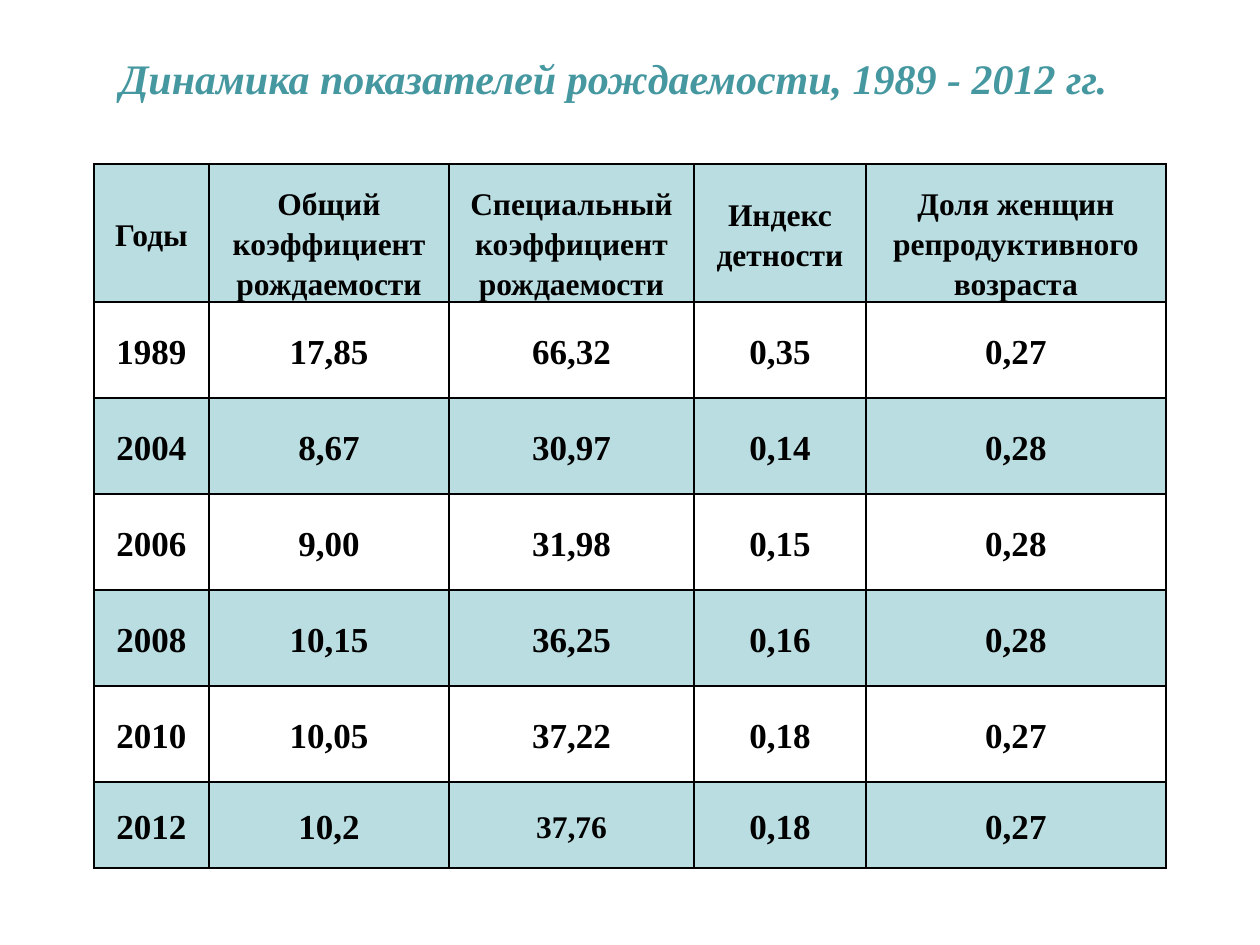
from lxml import etree
from pptx import Presentation, util as u
from pptx.dml.color import RGBColor
from pptx.enum import text
from pptx.oxml.ns import qn

TITLE = "Динамика показателей рождаемости, 1989 - 2012 гг."
HEAD = ["Годы", "Общий коэффициент рождаемости",
        "Специальный коэффициент рождаемости", "Индекс детности",
        "Доля женщин репродуктивного возраста"]
DATA = [
    ["1989", "17,85", "66,32", "0,35", "0,27"],
    ["2004", "8,67", "30,97", "0,14", "0,28"],
    ["2006", "9,00", "31,98", "0,15", "0,28"],
    ["2008", "10,15", "36,25", "0,16", "0,28"],
    ["2010", "10,05", "37,22", "0,18", "0,27"],
    ["2012", "10,2", "37,76", "0,18", "0,27"],
]
COLS = [115, 240, 245, 172, 300]
ROWS = [138] + [96] * 5 + [86]
LOW = {1, 2, 4}        # header columns set at the bottom
SMALL = (6, 2)         # the one value in header size

FONT = "Times New Roman"
TEAL = RGBColor(0x45, 0x97, 0xA0)
DARK = RGBColor(0x22, 0x4B, 0x50)
PALE = RGBColor(0xBA, 0xDD, 0xE1)
WHITE = RGBColor(0xFF, 0xFF, 0xFF)
BLACK = RGBColor(0, 0, 0)


def px(n):
    return u.Emu(round(n * 914400 / 126))


def stroke(line, color):
    fill = etree.SubElement(line, qn("a:solidFill"))
    etree.SubElement(fill, qn("a:srgbClr"), val=str(color))


def write(frame, words, size, color, slant=False):
    para = frame.paragraphs[0]
    para.alignment = text.PP_ALIGN.CENTER
    run = para.add_run()
    run.text = words
    font = run.font
    font.name, font.size, font.bold = FONT, u.Pt(size), True
    font.color.rgb = color
    if slant:
        font.italic = True
    return para, run


def border(cell):
    props = cell._tc.get_or_add_tcPr()
    for i, side in enumerate(("lnL", "lnR", "lnT", "lnB")):
        line = etree.Element(qn("a:" + side), w=str(u.Pt(1)))
        stroke(line, BLACK)
        props.insert(i, line)


deck = Presentation()
deck.slide_width, deck.slide_height = px(1260), px(945)
slide = deck.slides.add_slide(deck.slide_layouts[6])

# Title with a thin dark outline
box = slide.shapes.add_textbox(px(78), px(29), px(1071), px(98))
frame = box.text_frame
frame.word_wrap = True
frame.vertical_anchor = text.MSO_ANCHOR.MIDDLE
para, run = write(frame, TITLE, 24, TEAL, slant=True)
line = etree.Element(qn("a:ln"), w=str(u.Pt(0.75)))
stroke(line, DARK)
run.font._element.insert(0, line)

# Table of birth rates
grid = slide.shapes.add_table(len(ROWS), len(COLS), px(94), px(164),
                              px(sum(COLS)), px(sum(ROWS))).table
for col, wide in zip(grid.columns, COLS):
    col.width = px(wide)
for row, high in zip(grid.rows, ROWS):
    row.height = px(high)

for r, items in enumerate([HEAD] + DATA):
    for c, words in enumerate(items):
        cell = grid.cell(r, c)
        cell.fill.solid()
        cell.fill.fore_color.rgb = WHITE if r % 2 else PALE
        cell.margin_left = cell.margin_right = px(9)
        cell.margin_top = cell.margin_bottom = 0
        low = r == 0 and c in LOW
        cell.vertical_anchor = (text.MSO_ANCHOR.BOTTOM if low
                                else text.MSO_ANCHOR.MIDDLE)
        size = 18 if r == 0 or (r, c) == SMALL else 20
        para, run = write(cell.text_frame, words, size, BLACK)
        para.line_spacing = 1.15
        border(cell)

deck.save("out.pptx")
